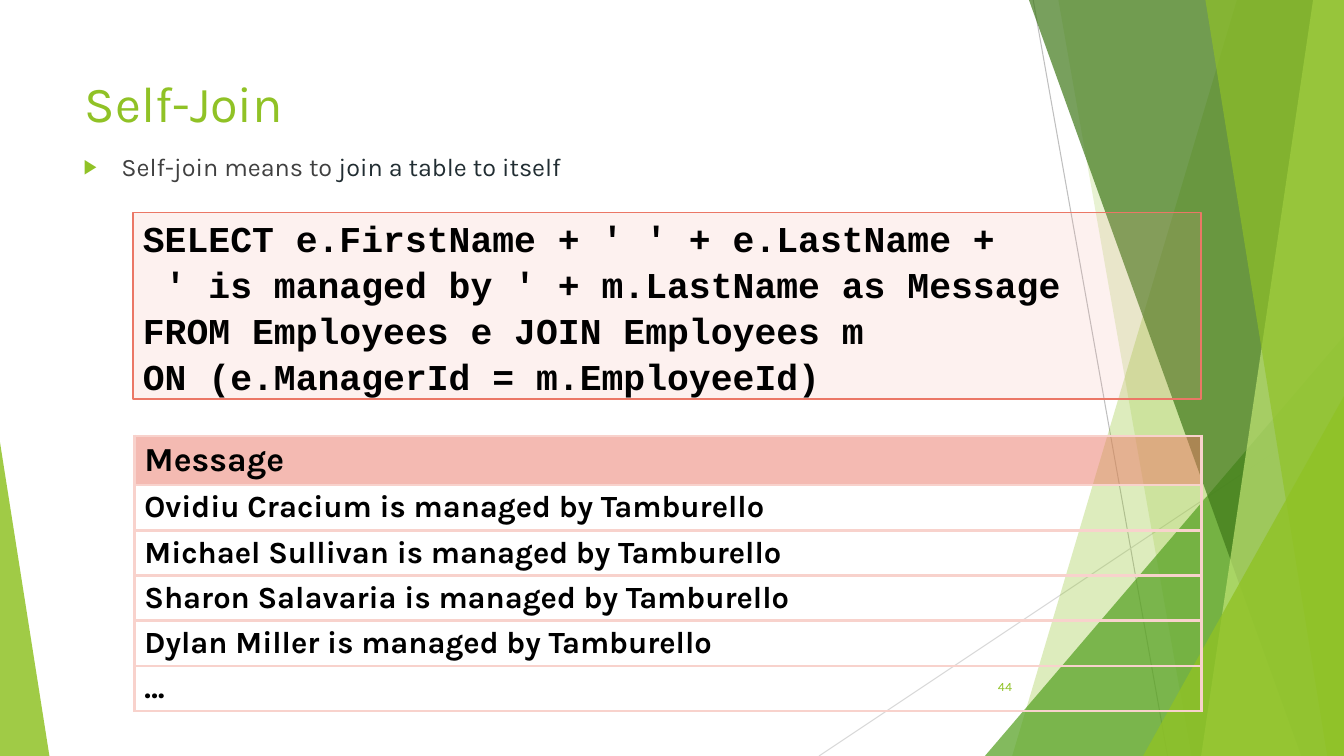
import pptx
import pptx.util
import pptx.dml.color
import pptx.enum.shapes
import pptx.enum.text
import pptx.oxml
import pptx.oxml.ns
from dataclasses import dataclass

Pt = pptx.util.Pt
ALIGN = pptx.enum.text.PP_ALIGN
ANCHOR = pptx.enum.text.MSO_ANCHOR
SHAPE = pptx.enum.shapes.MSO_SHAPE
WIDTH, HEIGHT = 960, 540


@dataclass(frozen=True)
class Theme:
    green: str = "90C226"
    mid_green: str = "54A021"
    dark_green: str = "3F7819"
    pale_green: str = "C0E474"
    ray: str = "BFBFBF"
    pale_ray: str = "D9D9D9"
    body: str = "404040"
    emphasis: str = "212D32"
    black: str = "000000"
    code_fill: str = "F2A499"
    coral: str = "EB7766"
    grid: str = "F8D2CC"
    font: str = "Karla"
    code_font: str = "Courier New"
    title_size: float = 36
    body_size: float = 18
    number_size: float = 9
    code_size: float = 26
    header_size: float = 24
    row_size: float = 22


THEME = Theme()

CODE = [
    "SELECT e.FirstName + ' ' + e.LastName +",
    " ' is managed by ' + m.LastName as Message",
    "FROM Employees e JOIN Employees m",
    "ON (e.ManagerId = m.EmployeeId)",
]
MESSAGES = [
    "Message",
    "Ovidiu Cracium is managed by Tamburello",
    "Michael Sullivan is managed by Tamburello",
    "Sharon Salavaria is managed by Tamburello",
    "Dylan Miller is managed by Tamburello",
    "…",
]


def rgb(color):
    return pptx.dml.color.RGBColor.from_string(color)


def xml(markup):
    namespace = pptx.oxml.ns.nsdecls("a")
    return pptx.oxml.parse_xml(markup.replace(" ", f" {namespace} ", 1))


def fill_with(target, color, opacity=100):
    target.fill.solid()
    target.fill.fore_color.rgb = rgb(color)
    if opacity < 100:
        target.fill.fore_color._xFill[0].append(xml(f'<a:alpha val="{opacity * 1000}"/>'))


def write(paragraph, text, size, color=THEME.black, font=THEME.font, bold=False,
          align=ALIGN.LEFT, line_spacing=1.0):
    paragraph.alignment = align
    paragraph.line_spacing = line_spacing
    run = paragraph.add_run()
    run.text = text
    run.font.name, run.font.size, run.font.bold = font, Pt(size), bold
    run.font.color.rgb = rgb(color)


def place(shape, left, top, width, height):
    shape.left, shape.top, shape.width, shape.height = map(Pt, (left, top, width, height))


def set_frame(frame, anchor):
    frame.word_wrap = True
    frame.auto_size = pptx.enum.text.MSO_AUTO_SIZE.NONE
    frame.vertical_anchor = anchor


def add_ray(shapes, start, end, color):
    ray = shapes.add_connector(pptx.enum.shapes.MSO_CONNECTOR.STRAIGHT,
                               *map(Pt, (*start, *end)))
    ray.line.color.rgb = rgb(color)
    ray.line.width = Pt(0.75)
    ray._element.spPr.append(xml("<a:effectLst />"))


def finish_facet(facet, color, opacity):
    fill_with(facet, color, opacity)
    facet.line.fill.background()
    facet.shadow.inherit = False


def add_band(shapes, top_x, bottom_x, color, opacity):
    """Add a facet running from a slanted left edge to the slide's right edge."""
    outline = shapes.build_freeform(Pt(top_x), Pt(0))
    outline.add_line_segments([(Pt(x), Pt(y)) for x, y in
                               ((WIDTH, 0), (WIDTH, HEIGHT), (bottom_x, HEIGHT))])
    finish_facet(outline.convert_to_shape(), color, opacity)


def add_corner(shapes, left, top, width, apex, color, opacity):
    """Add a triangle on the bottom edge, its apex at 0 (left) to 1 (right)."""
    corner = shapes.add_shape(SHAPE.ISOSCELES_TRIANGLE,
                              *map(Pt, (left, top, width, HEIGHT - top)))
    corner.adjustments[0] = apex
    finish_facet(corner, color, opacity)


def add_backdrop(slide):
    facets = slide.shapes.add_group_shape().shapes
    add_ray(facets, (738, 0), (834, HEIGHT), THEME.ray)
    add_ray(facets, (WIDTH, 290), (585, HEIGHT), THEME.pale_ray)
    add_band(facets, 883.5, 723, THEME.green, 30)
    add_band(facets, 756, 851, THEME.green, 20)
    add_corner(facets, 703.5, 240, 256.5, 1, THEME.mid_green, 72)
    add_band(facets, 735, 929.5, THEME.dark_green, 70)
    add_band(facets, 938, 858, THEME.pale_green, 70)
    add_band(facets, 861, 948, THEME.green, 65)
    add_corner(facets, 816.5, 283, 143.5, 1, THEME.green, 80)
    add_corner(facets, 0, 316, 35.3, 0, THEME.green, 85)


def add_heading(slide):
    title = slide.shapes.title
    place(title, 53.5, 48, 677, 104)
    set_frame(title.text_frame, ANCHOR.TOP)
    write(title.text_frame.paragraphs[0], "Self-Join", THEME.title_size, THEME.green)


def add_definition(slide):
    definition = slide.placeholders[1]
    place(definition, 52.5, 104.5, 677, 305)
    set_frame(definition.text_frame, ANCHOR.TOP)
    point = definition.text_frame.paragraphs[0]
    write(point, "Self-join means to ", THEME.body_size, THEME.body)
    write(point, "join a table to itself", THEME.body_size, THEME.emphasis)
    point.space_before = Pt(10)
    properties = point._p.get_or_add_pPr()
    properties.set("marL", str(Pt(27)))
    properties.set("indent", str(-Pt(27)))
    for markup in (f'<a:buClr ><a:srgbClr val="{THEME.green}"/></a:buClr>',
                   '<a:buSzPct val="80000"/>', '<a:buFont typeface="Arial"/>',
                   '<a:buChar char="▶"/>'):
        properties.append(xml(markup))


def add_page_number(slide):
    number = slide.shapes.add_textbox(*map(Pt, (676, 476, 54, 29)))
    set_frame(number.text_frame, ANCHOR.MIDDLE)
    write(number.text_frame.paragraphs[0], "44", THEME.number_size, THEME.green,
          align=ALIGN.RIGHT)


def add_code(slide):
    panel = slide.shapes.add_shape(SHAPE.RECTANGLE, *map(Pt, (95, 152, 763, 133)))
    fill_with(panel, THEME.code_fill, 15)
    panel.line.color.rgb = rgb(THEME.coral)
    panel.line.width = Pt(1)
    panel.shadow.inherit = False
    frame = panel.text_frame
    set_frame(frame, ANCHOR.MIDDLE)
    for index, line in enumerate(CODE):
        paragraph = frame.add_paragraph() if index else frame.paragraphs[0]
        write(paragraph, line, THEME.code_size, font=THEME.code_font, bold=True,
              line_spacing=1.05)


def add_borders(cell):
    properties = cell._tc.get_or_add_tcPr()
    for index, side in enumerate("LRTB"):
        properties.insert(index, xml(
            f'<a:ln{side} w="{Pt(2.25)}"><a:solidFill><a:srgbClr val="{THEME.grid}"/>'
            f'</a:solidFill></a:ln{side}>'))


def add_messages(slide):
    table = slide.shapes.add_table(len(MESSAGES), 1, *map(Pt, (96, 311.5, 762, 196.5))).table
    table.first_row = table.horz_banding = False
    for index, message in enumerate(MESSAGES):
        is_header = index == 0
        table.rows[index].height = Pt(35 if is_header else 32.3)
        cell = table.cell(index, 0)
        cell.vertical_anchor = ANCHOR.MIDDLE
        if is_header:
            fill_with(cell, THEME.coral, 50)
        else:
            cell.fill.background()
        add_borders(cell)
        write(cell.text_frame.paragraphs[0], message,
              THEME.header_size if is_header else THEME.row_size, bold=True, line_spacing=0.95)


def main():
    deck = pptx.Presentation()
    deck.slide_width, deck.slide_height = Pt(WIDTH), Pt(HEIGHT)
    slide = deck.slides.add_slide(deck.slide_layouts[1])
    add_backdrop(slide)
    add_heading(slide)
    add_definition(slide)
    add_page_number(slide)
    add_code(slide)
    add_messages(slide)
    deck.save("out.pptx")


if __name__ == "__main__":
    main()
